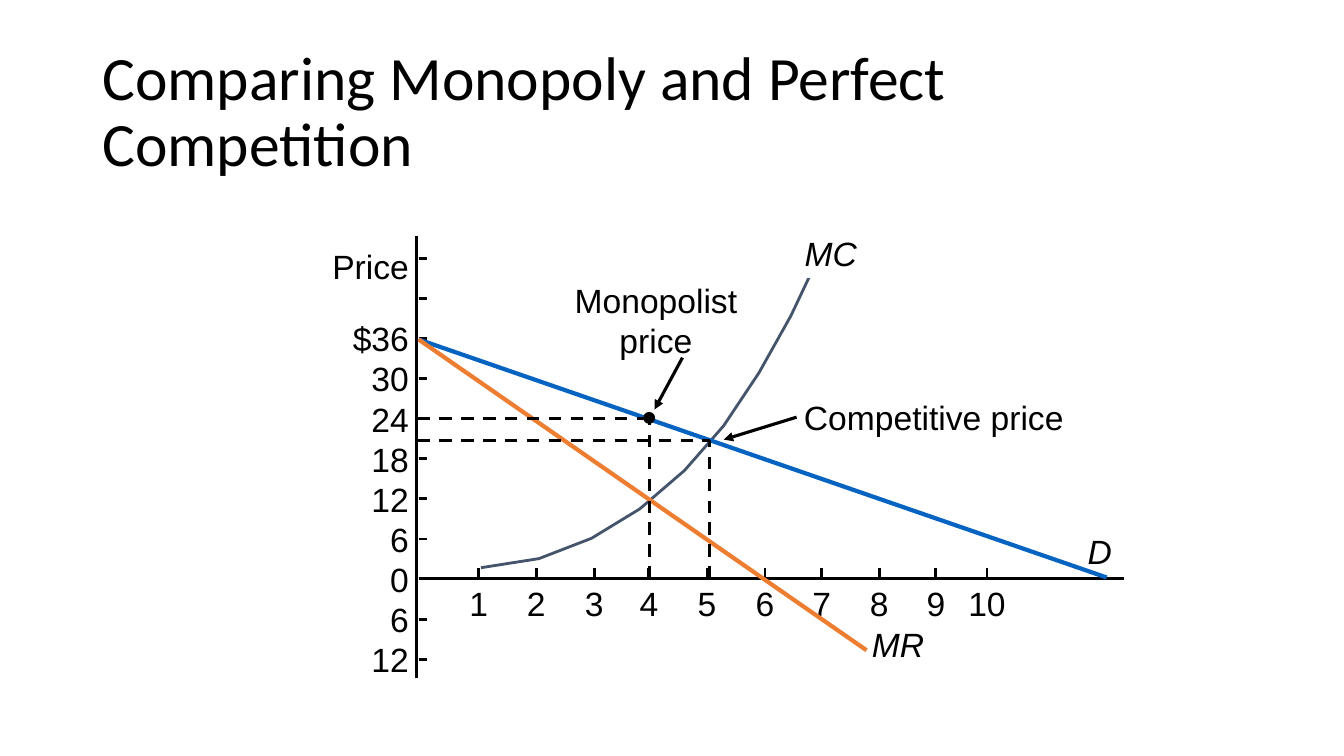
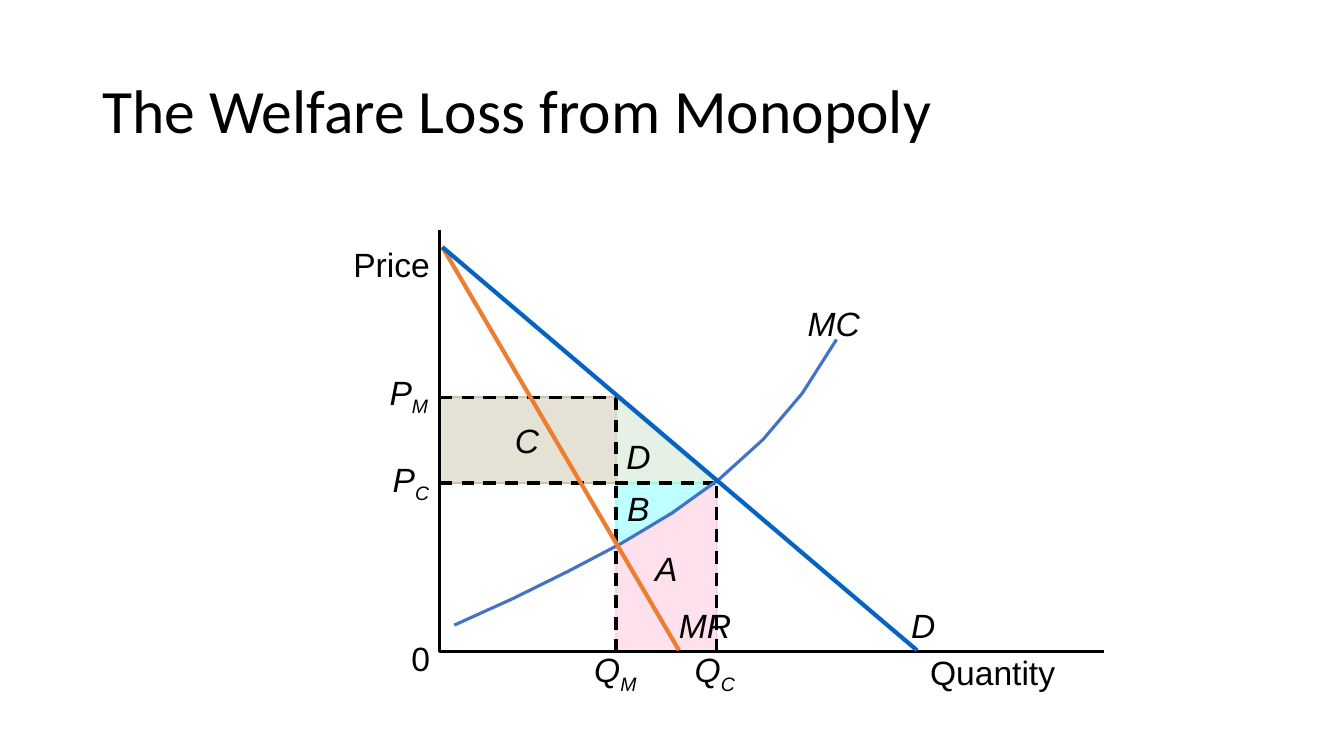
from lxml.etree import SubElement
from pptx import Presentation
from pptx.dml.color import RGBColor
from pptx.enum.dml import MSO_LINE
from pptx.enum.shapes import MSO_CONNECTOR, MSO_SHAPE
from pptx.enum.text import MSO_ANCHOR, MSO_AUTO_SIZE, PP_ALIGN
from pptx.oxml.ns import qn
from pptx.util import Pt

HUES = {
    "ink": "000000", "paper": "FFFFFF", "demand": "0563C1", "revenue": "ED7D31",
    "slate": "44546A", "cost": "4472C4",
    "pink": "FFC4DD", "sand": "CCC4AA", "green": "CCE5CC", "aqua": "7FFFFF",
}


def hue(name):
    return RGBColor.from_string(HUES[name])


class Deck:
    """Holds the shared style and the current slide."""

    def __init__(self):
        self.prs = Presentation()
        self.prs.slide_width, self.prs.slide_height = Pt(960), Pt(540)

    def start(self, title):
        self.slide = self.prs.slides.add_slide(self.prs.slide_layouts[5])
        self.shapes = self.slide.shapes
        head = self.shapes.title
        head.left, head.top, head.width, head.height = Pt(66), Pt(28.8), Pt(828), Pt(104.4)
        frame = head.text_frame
        frame.auto_size = MSO_AUTO_SIZE.NONE
        frame.word_wrap = True
        frame.vertical_anchor = MSO_ANCHOR.MIDDLE
        para = frame.paragraphs[0]
        para.alignment, para.line_spacing = PP_ALIGN.LEFT, 0.9
        self.run(para, title, 44, "Calibri")

    def run(self, para, text, size=24, face="Arial", slant=False):
        run = para.add_run()
        run.text = text
        font = run.font
        font.size, font.name, font.italic = Pt(size), face, slant
        font.color.rgb = hue("ink")
        return run

    def label(self, text, x, y, slant=False, sub="", wide=60, high=30,
              align=PP_ALIGN.CENTER, fill=None):
        """Text centred on y; x is its centre, or its right edge if right-aligned."""
        left = x - wide if align == PP_ALIGN.RIGHT else x - wide / 2
        box = self.shapes.add_textbox(Pt(left), Pt(y - high / 2), Pt(wide), Pt(high))
        if fill:
            box.fill.solid()
            box.fill.fore_color.rgb = hue(fill)
        frame = box.text_frame
        frame.word_wrap = True
        frame.vertical_anchor = MSO_ANCHOR.MIDDLE
        frame.margin_left = frame.margin_right = frame.margin_top = frame.margin_bottom = 0
        para = frame.paragraphs[0]
        para.alignment = align
        self.run(para, text, slant=slant)
        if sub:
            low = self.run(para, sub, slant=slant)
            low.font._element.set("baseline", "-25000")
        return box

    def line(self, start, end, color="ink", width=2.25, dash=False, arrow=False):
        link = self.shapes.add_connector(
            MSO_CONNECTOR.STRAIGHT, *(Pt(v) for v in (*start, *end)))
        link.line.color.rgb, link.line.width = hue(color), Pt(width)
        if dash:
            link.line.dash_style = MSO_LINE.DASH
        if arrow:
            SubElement(link.line._get_or_add_ln(), qn("a:tailEnd"), type="triangle")
        SubElement(link._element.spPr, qn("a:effectLst"))
        return link

    def trace(self, points, color, width, closed=False):
        first, *rest = [(Pt(x), Pt(y)) for x, y in points]
        pen = self.shapes.build_freeform(*first, scale=1.0)
        pen.add_line_segments(rest, close=closed)
        form = pen.convert_to_shape()
        form.shadow.inherit = False
        form.fill.background()
        form.line.color.rgb, form.line.width = hue(color), Pt(width)
        return form

    def area(self, points, color):
        form = self.trace(points, color, 1, closed=True)
        form.fill.solid()
        form.fill.fore_color.rgb = hue(color)
        tint = form._element.spPr.find(qn("a:solidFill"))[0]
        SubElement(tint, qn("a:alpha"), val="50000")

    def dot(self, x, y, size):
        spot = self.shapes.add_shape(
            MSO_SHAPE.OVAL, Pt(x - size / 2), Pt(y - size / 2), Pt(size), Pt(size))
        spot.shadow.inherit = False
        spot.fill.solid()
        spot.fill.fore_color.rgb = hue("ink")
        spot.line.color.rgb, spot.line.width = hue("ink"), Pt(1)


def compare(deck):
    deck.start("Comparing Monopoly and Perfect Competition")
    edge, base, right = 299, 413.5, 292

    # Price axis: the two top ticks have no number
    deck.line((297.5, 168.5), (297.5, 484), width=2)
    deck.label("Price", right, 190, align=PP_ALIGN.RIGHT)
    marks = ["", "", "$36", "30", "24", "18", "12", "6", "0", "6", "12"]
    for i, mark in enumerate(marks):
        y = 184.4 + 28.65 * i
        if mark:
            deck.label(mark, right, y, align=PP_ALIGN.RIGHT)
        if mark != "0":
            deck.line((edge, y), (edge + 6, y), width=2)

    # Quantity axis
    deck.line((edge, base), (803, base), width=2)
    ticks = [342, 383, 424.5, 463.5, 505, 546.5, 587, 628, 668.5, 705]
    for i, x in enumerate(ticks, 1):
        deck.line((x, base + 1), (x, base - 7.5), width=2)
        deck.label(str(i), x, 430.5, wide=36)

    # Marginal cost, demand and marginal revenue
    deck.trace([(343.5, 405.5), (385, 399), (422.5, 384.5), (457, 363.5), (489, 336),
                (517, 304), (542, 266.5), (565, 225.5), (585.5, 182)], "slate", 2)
    deck.label("MC", 593.5, 180.5, True, wide=52, high=36, fill="paper")
    for name, end, spot, color in (("D", (790.5, 412.5), (785.5, 394), "demand"),
                                   ("MR", (619, 464.5), (641.5, 460), "revenue")):
        deck.line((edge, 242.5), end, color, 3)
        deck.label(name, *spot, True)

    # Guides to both prices
    for x, y in ((463.7, 298.8), (507, 314.6)):
        deck.line((298, y), (x, y), dash=True)
        deck.line((x, base), (x, y), dash=True)
    deck.dot(463.7, 298.5, 7.5)

    # Callouts
    deck.label("Monopolist price", 468.5, 228.5, wide=122, high=58)
    deck.line((487.5, 255.5), (467.5, 292.5), arrow=True)
    note = deck.label("Competitive price", 667, 298, wide=196)
    link = deck.line((569, 298), (517, 314), arrow=True)
    link.begin_connect(note, 1)


def welfare(deck):
    deck.start("The Welfare Loss from Monopoly")
    edge, base = 314, 465.5
    qm, qc, pm, pc, cost = 440, 512, 283.7, 345, 391

    # Shaded areas
    deck.area([(qm, cost), (qc, pc), (qc, base), (qm, base)], "pink")
    deck.area([(edge, pm), (qm, pm), (qm, pc), (edge, pc)], "sand")
    deck.area([(qm, pm), (qc, pc), (qm, pc)], "green")
    deck.area([(qm, cost), (qc, pc), (qm, pc)], "aqua")

    # Axes and guides
    deck.trace([(edge, 164), (edge, base), (788.5, base)], "ink", 2)
    for x, y in ((qm, pm), (qc, pc)):
        deck.line((edge, y), (x, y), dash=True)
        deck.line((x, base), (x, y), dash=True)

    # Curves
    deck.trace([(324.5, 446.5), (366.5, 427.5), (406, 408), (444, 388), (480, 366.5),
                (514, 342), (545, 314), (573, 281), (597.5, 242.5)], "cost", 2.25)
    for x, color in ((485, "revenue"), (655, "demand")):
        deck.line((316, 176.5), (x, 464.5), color, 3)

    # Labels
    deck.label("Price", 279.7, 188.5)
    deck.label("0", 300.5, 470)
    deck.label("Quantity", 709, 480, wide=100)
    for name, x, y in (("A", 476, 405.5), ("B", 456, 363), ("C", 376.5, 314.5),
                       ("D", 456, 326), ("MC", 595.5, 230.5), ("MR", 503.5, 446.5),
                       ("D", 659.5, 446.5)):
        deck.label(name, x, y, True)
    for name, sub, x, y in (("P", "M", 292, 282), ("P", "C", 293.5, 344),
                            ("Q", "M", 439.5, 480), ("Q", "C", 510.5, 480)):
        deck.label(name, x, y, True, sub)


def main():
    deck = Deck()
    compare(deck)
    welfare(deck)
    deck.prs.save("out.pptx")


if __name__ == "__main__":
    main()
